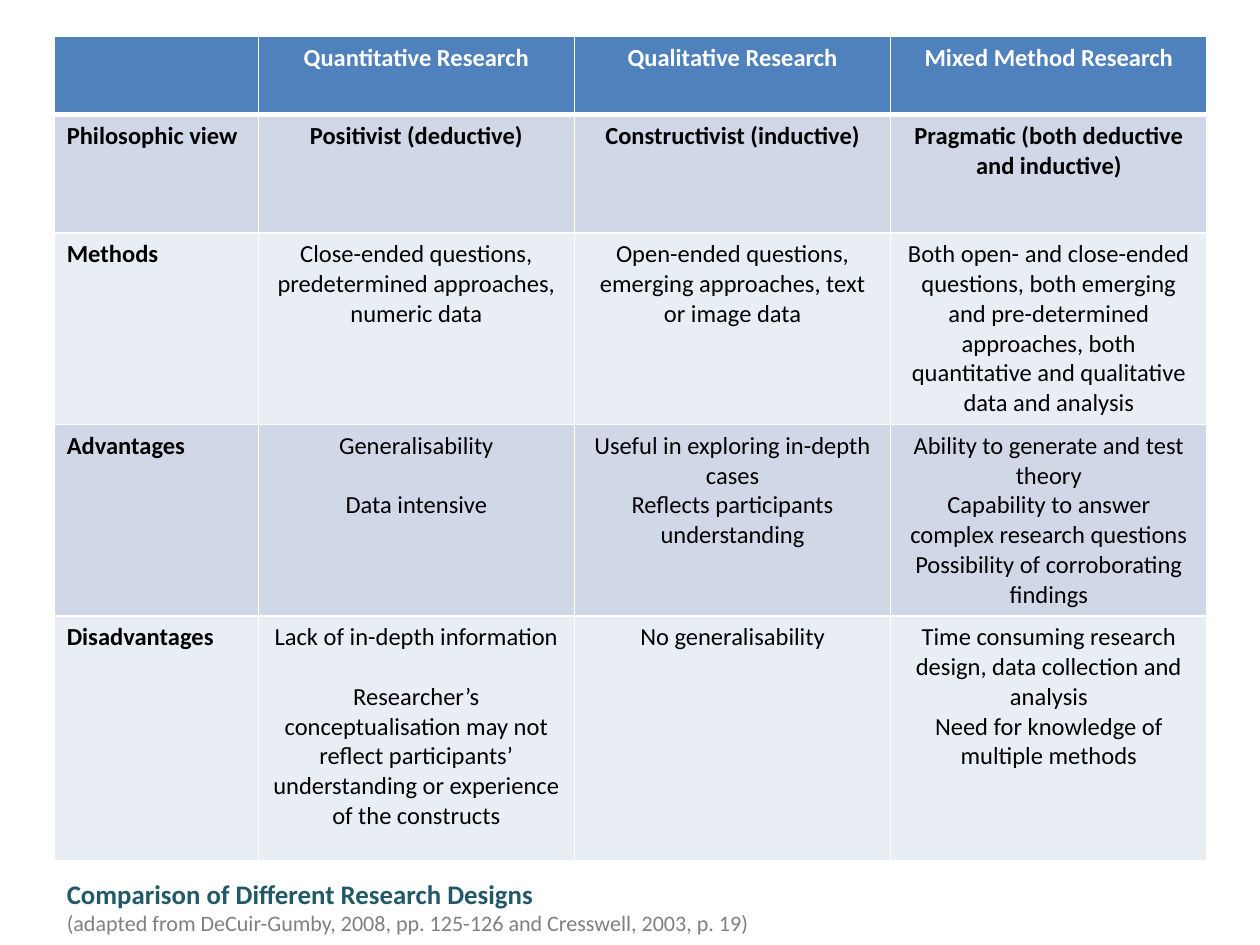
import dataclasses
import typing

import lxml.etree
import pptx
import pptx.dml.color
import pptx.enum.text
import pptx.oxml.ns
import pptx.util

Color = pptx.dml.color.RGBColor
Align = pptx.enum.text.PP_ALIGN

WHITE = Color(0xFF, 0xFF, 0xFF)
BLACK = Color(0x00, 0x00, 0x00)
HEADER_BLUE = Color(0x4F, 0x81, 0xBD)
BAND_DARK = Color(0xD0, 0xD8, 0xE8)
BAND_LIGHT = Color(0xE9, 0xED, 0xF4)
TEAL = Color(0x21, 0x59, 0x68)
GREY = Color(0x80, 0x80, 0x80)

FONT = "Calibri"
SLIDE_WIDTH, SLIDE_HEIGHT = pptx.util.Inches(10), pptx.util.Inches(7.5)
LEFT = pptx.util.Inches(0.43)
TABLE_TOP = pptx.util.Inches(0.29)
LABEL_WIDTH, DESIGN_WIDTH = pptx.util.Inches(1.62), pptx.util.Inches(2.51)
BLANK_LINE = 17


@dataclasses.dataclass(frozen=True)
class Aspect:
    label: str
    designs: tuple[tuple[str, ...], ...]
    height: float
    fill: Color
    color: Color = BLACK
    bold: bool = False
    gap: float = 0
    rule_below: float = 1


ASPECTS = (
    Aspect("", (("Quantitative Research",), ("Qualitative Research",),
                ("Mixed Method Research",)),
           0.62, HEADER_BLUE, color=WHITE, bold=True, rule_below=3),
    Aspect("Philosophic view",
           (("Positivist (deductive)",), ("Constructivist (inductive)",),
            ("Pragmatic (both deductive and inductive)",)),
           0.94, BAND_DARK, bold=True),
    Aspect("Methods",
           (("Close-ended questions, predetermined approaches, numeric data",),
            ("Open-ended questions, emerging approaches, text or image data",),
            ("Both open- and close-ended questions, both emerging and "
             "pre-determined approaches, both quantitative and qualitative "
             "data and analysis",)),
           1.52, BAND_LIGHT),
    Aspect("Advantages",
           (("Generalisability", "Data intensive"),
            ("Useful in exploring in-depth cases",
             "Reflects participants understanding"),
            ("Ability to generate and test theory",
             "Capability to answer complex research questions",
             "Possibility of corroborating findings")),
           1.52, BAND_DARK, gap=BLANK_LINE),
    Aspect("Disadvantages",
           (("Lack of in-depth information",
             "Researcher’s conceptualisation may not reflect participants’ "
             "understanding or experience of the constructs"),
            ("No generalisability",),
            ("Time consuming research design, data collection and analysis",
             "Need for knowledge of multiple methods")),
           1.94, BAND_LIGHT, gap=BLANK_LINE),
)


def write(paragraph: typing.Any, text: str, *, size: float = 14,
          color: Color = BLACK, bold: bool = False,
          align: Align = Align.LEFT, before: float = 0) -> None:
    paragraph.alignment = align
    paragraph.space_before = pptx.util.Pt(before)
    run = paragraph.add_run()
    run.text = text
    run.font.name = FONT
    run.font.size = pptx.util.Pt(size)
    run.font.bold = bold
    run.font.color.rgb = color


def rule_cell(cell: typing.Any, top: float, bottom: float) -> None:
    properties = cell._tc.get_or_add_tcPr()
    qn = pptx.oxml.ns.qn
    for side, width in (("L", 1), ("R", 1), ("T", top), ("B", bottom)):
        line = lxml.etree.SubElement(properties, qn(f"a:ln{side}"),
                                     w=str(pptx.util.Pt(width)))
        solid = lxml.etree.SubElement(line, qn("a:solidFill"))
        lxml.etree.SubElement(solid, qn("a:srgbClr"), val=str(WHITE))


def fill_cell(cell: typing.Any, lines: tuple[str, ...], aspect: Aspect,
              top: float, *, bold: bool, align: Align, gap: float = 0) -> None:
    rule_cell(cell, top, aspect.rule_below)
    cell.fill.solid()
    cell.fill.fore_color.rgb = aspect.fill
    frame = cell.text_frame
    for index, text in enumerate(lines):
        paragraph = frame.add_paragraph() if index else frame.paragraphs[0]
        write(paragraph, text, color=aspect.color, bold=bold, align=align,
              before=gap if index else 0)


def draw_comparison(slide: typing.Any) -> None:
    widths = (LABEL_WIDTH,) + (DESIGN_WIDTH,) * 3
    heights = [pptx.util.Inches(aspect.height) for aspect in ASPECTS]
    comparison = slide.shapes.add_table(
        len(heights), len(widths), LEFT, TABLE_TOP, sum(widths), sum(heights)).table
    for column, width in zip(comparison.columns, widths):
        column.width = width
    top = 1
    for number, aspect in enumerate(ASPECTS):
        comparison.rows[number].height = heights[number]
        labels = (aspect.label,) if aspect.label else ()
        fill_cell(comparison.cell(number, 0), labels, aspect, top,
                  bold=True, align=Align.LEFT)
        for column, lines in enumerate(aspect.designs, 1):
            fill_cell(comparison.cell(number, column), lines, aspect, top,
                      bold=aspect.bold, align=Align.CENTER,
                      gap=aspect.gap if column == 1 else 0)
        top = aspect.rule_below


def draw_caption(slide: typing.Any) -> None:
    caption = slide.shapes.title
    caption.left, caption.top = LEFT, pptx.util.Inches(6.89)
    caption.width, caption.height = pptx.util.Inches(9.06), pptx.util.Inches(0.61)
    frame = caption.text_frame
    frame.word_wrap = True
    frame.auto_size = pptx.enum.text.MSO_AUTO_SIZE.NONE
    frame.vertical_anchor = pptx.enum.text.MSO_ANCHOR.MIDDLE
    paragraph = frame.paragraphs[0]
    write(paragraph, "Comparison of Different Research Designs",
          size=15.3, color=TEAL, bold=True)
    paragraph.add_line_break()
    write(paragraph,
          "(adapted from DeCuir-Gumby, 2008, pp. 125-126 and Cresswell, 2003, p. 19)",
          size=12.6, color=GREY)


def main() -> None:
    deck = pptx.Presentation()
    deck.slide_width, deck.slide_height = SLIDE_WIDTH, SLIDE_HEIGHT
    slide = deck.slides.add_slide(deck.slide_layouts.get_by_name("Title Only"))
    draw_caption(slide)
    draw_comparison(slide)
    deck.save("out.pptx")


if __name__ == "__main__":
    main()
